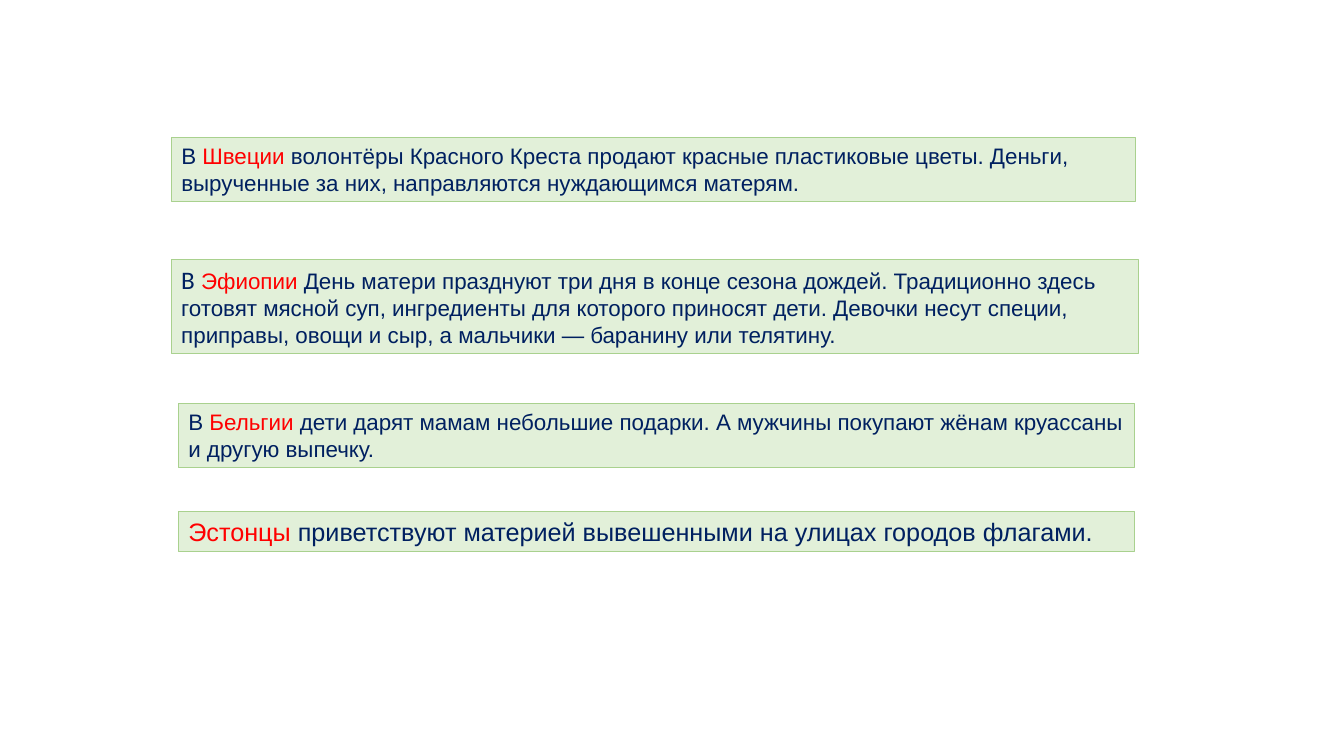
from dataclasses import dataclass

from pptx import Presentation
from pptx import util as u
from pptx.dml.color import RGBColor
from pptx.enum import shapes, text

SLIDE_WIDTH = u.Inches(13.33)
SLIDE_HEIGHT = u.Inches(7.5)
NAVY, RED = "002060", "FF0000"
PALE_GREEN, GREEN = "E2F0D9", "A9D18E"


@dataclass(frozen=True)
class Phrase:
    wording: str
    color: str = NAVY
    size: float = 16
    font: str = "Arial"


@dataclass(frozen=True)
class Custom:
    left: float
    top: float
    width: float
    height: float
    phrases: tuple[Phrase, ...]
    align: text.PP_ALIGN = text.PP_ALIGN.LEFT


CUSTOMS = (
    Custom(12.75, 18.13, 71.72, 8.53, (
        Phrase("В "),
        Phrase("Швеции ", RED),
        Phrase("волонтёры Красного Креста продают красные пластиковые цветы. "
               "Деньги, вырученные за них, направляются нуждающимся матерям."),
    )),
    Custom(12.75, 34.27, 71.94, 12.53, (
        Phrase("В", size=18, font="Calibri"),
        Phrase(" Эфиопии ", RED),
        Phrase("День матери празднуют три дня в конце сезона дождей. "
               "Традиционно здесь готовят мясной суп, ингредиенты для которого "
               "приносят дети. Девочки несут специи, приправы, овощи и сыр, "
               "а мальчики — баранину или телятину."),
    )),
    Custom(13.28, 53.33, 71.12, 8.53, (
        Phrase("В"),
        Phrase(" Бельгии ", RED),
        Phrase("дети дарят мамам небольшие подарки. А мужчины покупают жёнам "
               "круассаны и другую выпечку."),
    )),
    Custom(13.28, 67.6, 71.12, 5.33, (
        Phrase("Эстонцы", RED, size=18),
        Phrase(" приветствуют материей вывешенными на улицах городов флагами.",
               size=18),
    ), text.PP_ALIGN.JUSTIFY),
)


def rgb(color: str) -> RGBColor:
    return RGBColor.from_string(color)


def across(percent: float) -> int:
    return round(SLIDE_WIDTH * percent / 100)


def down(percent: float) -> int:
    return round(SLIDE_HEIGHT * percent / 100)


def add_text(paragraph, wording: str, *, color: str, size: float, font: str) -> None:
    run = paragraph.add_run()
    run.text = wording
    run.font.name = font
    run.font.size = u.Pt(size)
    run.font.color.rgb = rgb(color)


def draw_custom(slide, custom: Custom) -> None:
    panel = slide.shapes.add_shape(
        shapes.MSO_SHAPE.RECTANGLE,
        across(custom.left), down(custom.top),
        across(custom.width), down(custom.height),
    )
    panel.shadow.inherit = False
    panel.fill.solid()
    panel.fill.fore_color.rgb = rgb(PALE_GREEN)
    panel.line.color.rgb = rgb(GREEN)
    panel.line.width = u.Pt(0.75)
    frame = panel.text_frame
    frame.word_wrap = True
    frame.auto_size = text.MSO_AUTO_SIZE.SHAPE_TO_FIT_TEXT
    frame.vertical_anchor = text.MSO_ANCHOR.TOP
    paragraph = frame.paragraphs[0]
    paragraph.alignment = custom.align
    for phrase in custom.phrases:
        add_text(paragraph, phrase.wording, color=phrase.color,
                 size=phrase.size, font=phrase.font)


def main() -> None:
    deck = Presentation()
    deck.slide_width, deck.slide_height = SLIDE_WIDTH, SLIDE_HEIGHT
    slide = deck.slides.add_slide(deck.slide_layouts[6])
    for custom in CUSTOMS:
        draw_custom(slide, custom)
    deck.save("out.pptx")


if __name__ == "__main__":
    main()
